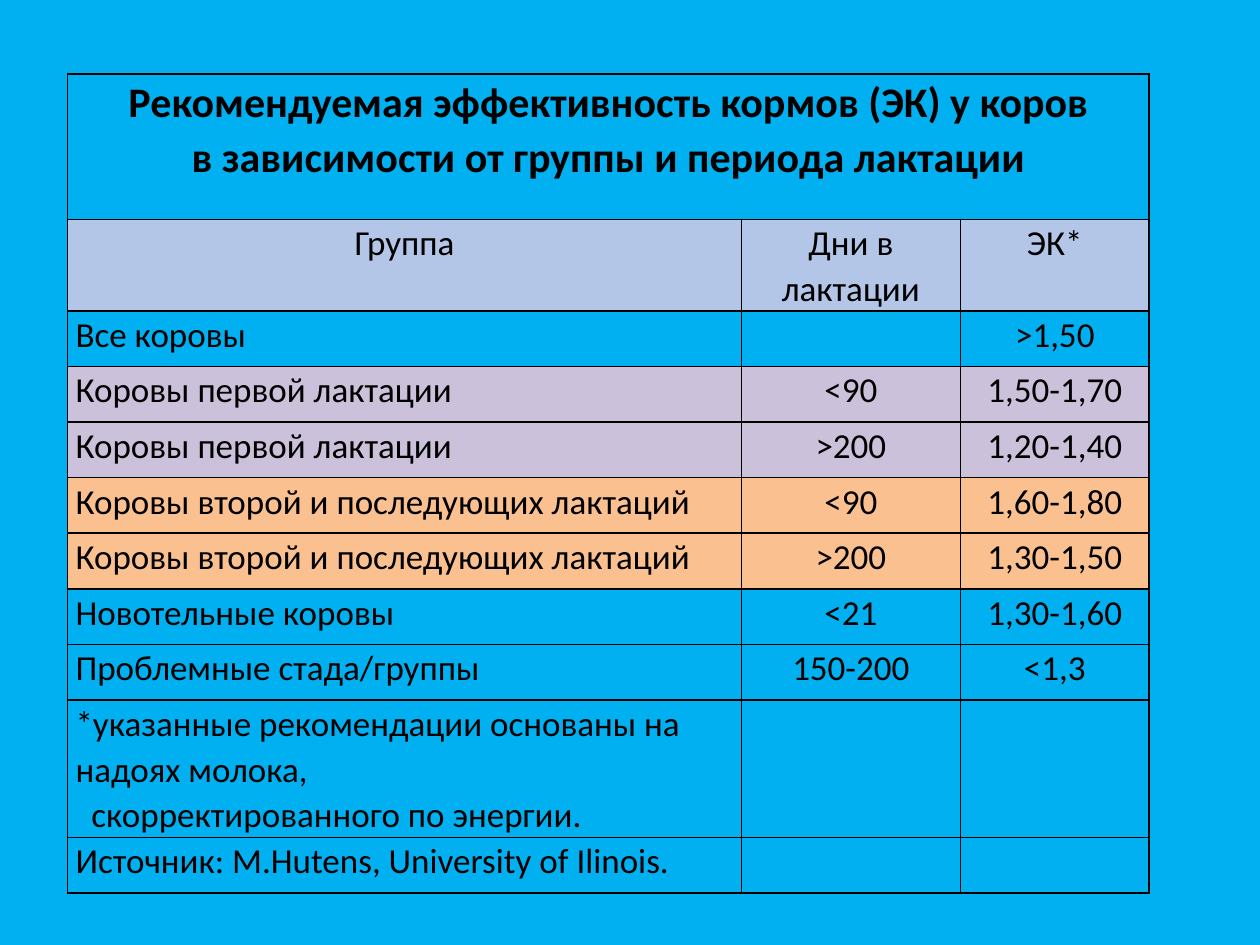
from dataclasses import dataclass

from lxml import etree
from pptx import Presentation
from pptx.dml.color import RGBColor
from pptx.enum.text import PP_ALIGN
from pptx.oxml.ns import qn
from pptx.util import Pt

LEFT, CENTER = PP_ALIGN.LEFT, PP_ALIGN.CENTER


@dataclass(frozen=True)
class Theme:
    font: str = "Calibri"
    title_size: int = 24
    body_size: int = 20
    line_spacing: float = 1.07
    ink: str = "000000"
    background: str = "00B0F0"
    header: str = "B4C6E7"
    first: str = "CCC1DA"
    later: str = "FAC090"


THEME = Theme()
TITLE = "Рекомендуемая эффективность кормов (ЭК) у коров\nв зависимости от группы и периода лактации"
NOTE = "*указанные рекомендации основаны на надоях молока,\nскорректированного по энергии."
SOURCE = "Источник: M.Hutens, University of Ilinois."
ROWS = [
    (TITLE, "", "", None),
    ("Группа", "Дни в лактации", "ЭК*", THEME.header),
    ("Все коровы", "", ">1,50", None),
    ("Коровы первой лактации", "<90", "1,50-1,70", THEME.first),
    ("Коровы первой лактации", ">200", "1,20-1,40", THEME.first),
    ("Коровы второй и последующих лактаций", "<90", "1,60-1,80", THEME.later),
    ("Коровы второй и последующих лактаций", ">200", "1,30-1,50", THEME.later),
    ("Новотельные коровы", "<21", "1,30-1,60", None),
    ("Проблемные стада/группы", "150-200", "<1,3", None),
    (NOTE, "", "", None),
    (SOURCE, "", "", None),
]
COLUMN_WIDTHS = (385, 125.3, 107.8)
ROW_HEIGHT = 31.75
TALL_ROWS = {TITLE: 83, NOTE: 65}
NOTE_INDENT = 9


def style_cell(cell, fill):
    cell.margin_left = cell.margin_right = Pt(4.5)
    cell.margin_top = cell.margin_bottom = 0
    tc_pr = cell._tc.get_or_add_tcPr()
    for side in ("a:lnL", "a:lnR", "a:lnT", "a:lnB"):
        ln = etree.SubElement(tc_pr, qn(side), w=str(Pt(1)))
        solid = etree.SubElement(ln, qn("a:solidFill"))
        etree.SubElement(solid, qn("a:srgbClr"), val=THEME.ink)
    if fill:
        cell.fill.solid()
        cell.fill.fore_color.rgb = RGBColor.from_string(fill)
    else:
        cell.fill.background()


def write_cell(cell, text, size, align, bold):
    tf = cell.text_frame
    tf.text = text
    for p in tf.paragraphs:
        p.alignment = align
        p.line_spacing = THEME.line_spacing
        for r in p.runs:
            r.font.name = THEME.font
            r.font.size = Pt(size)
            r.font.bold = bold
            r.font.color.rgb = RGBColor.from_string(THEME.ink)


def add_feed_table(s, left, top, width, height):
    table = s.shapes.add_table(
        len(ROWS), len(COLUMN_WIDTHS), Pt(left), Pt(top), Pt(width), Pt(height)
    ).table
    table.first_row = table.horz_banding = False
    scale = width / sum(COLUMN_WIDTHS)
    for column, column_width in zip(table.columns, COLUMN_WIDTHS):
        column.width = Pt(column_width * scale)
    for i, (*texts, fill) in enumerate(ROWS):
        table.rows[i].height = Pt(TALL_ROWS.get(texts[0], ROW_HEIGHT))
        is_title = texts[0] == TITLE
        size = THEME.title_size if is_title else THEME.body_size
        for j, text in enumerate(texts):
            cell = table.cell(i, j)
            style_cell(cell, fill)
            if text:
                align = LEFT if j == 0 and i > 1 else CENTER
                write_cell(cell, text, size, align, is_title)
            if text == NOTE:
                p = cell.text_frame.paragraphs[1]
                p._p.get_or_add_pPr().set("marL", str(Pt(NOTE_INDENT)))
    table.cell(0, 0).merge(table.cell(0, len(COLUMN_WIDTHS) - 1))


def main():
    prs = Presentation()
    prs.slide_width, prs.slide_height = Pt(720), Pt(540)
    s = prs.slides.add_slide(prs.slide_layouts[6])
    s.background.fill.solid()
    s.background.fill.fore_color.rgb = RGBColor.from_string(THEME.background)
    add_feed_table(s, 38.7, 42.3, 618, 465)
    prs.save("out.pptx")


if __name__ == "__main__":
    main()
